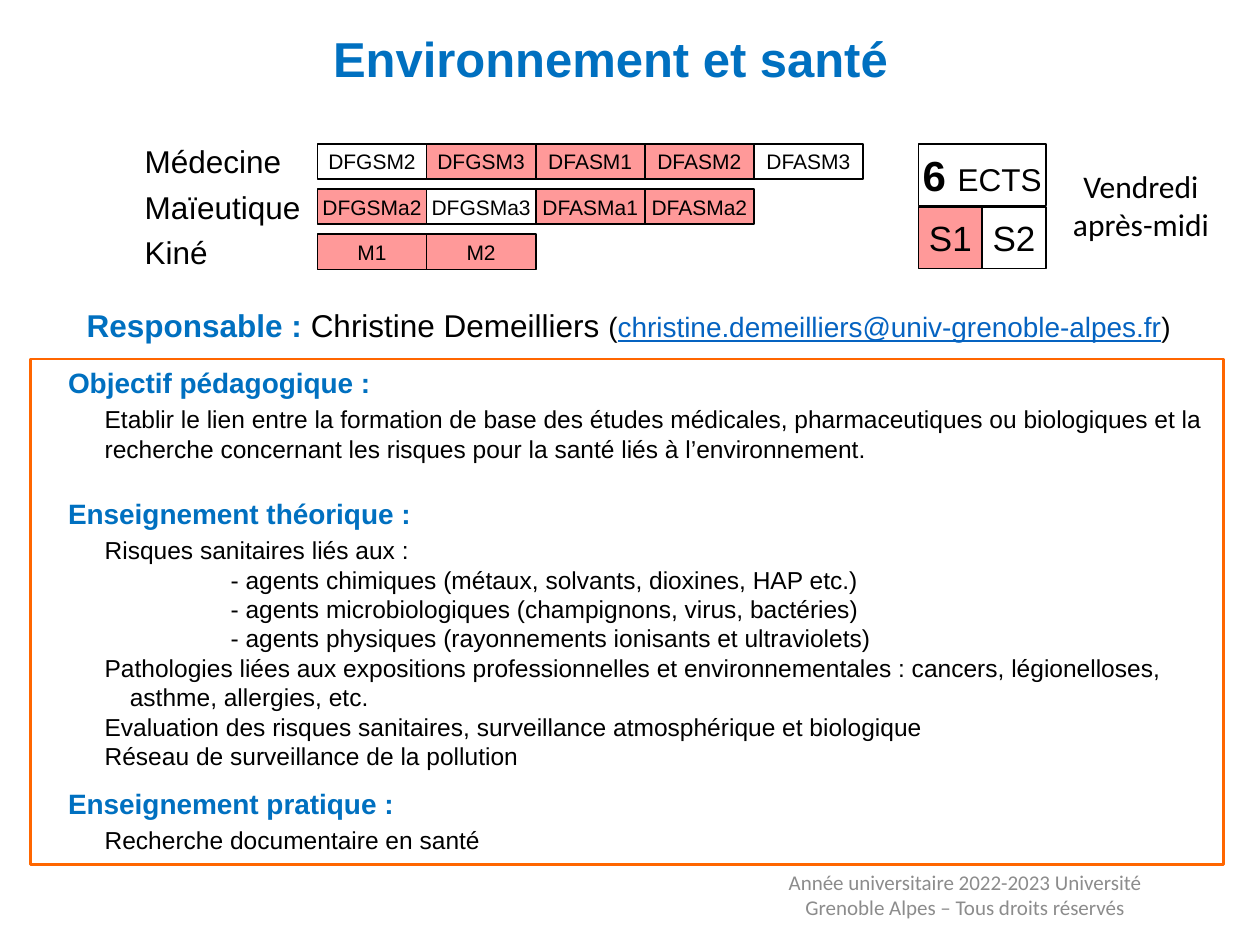
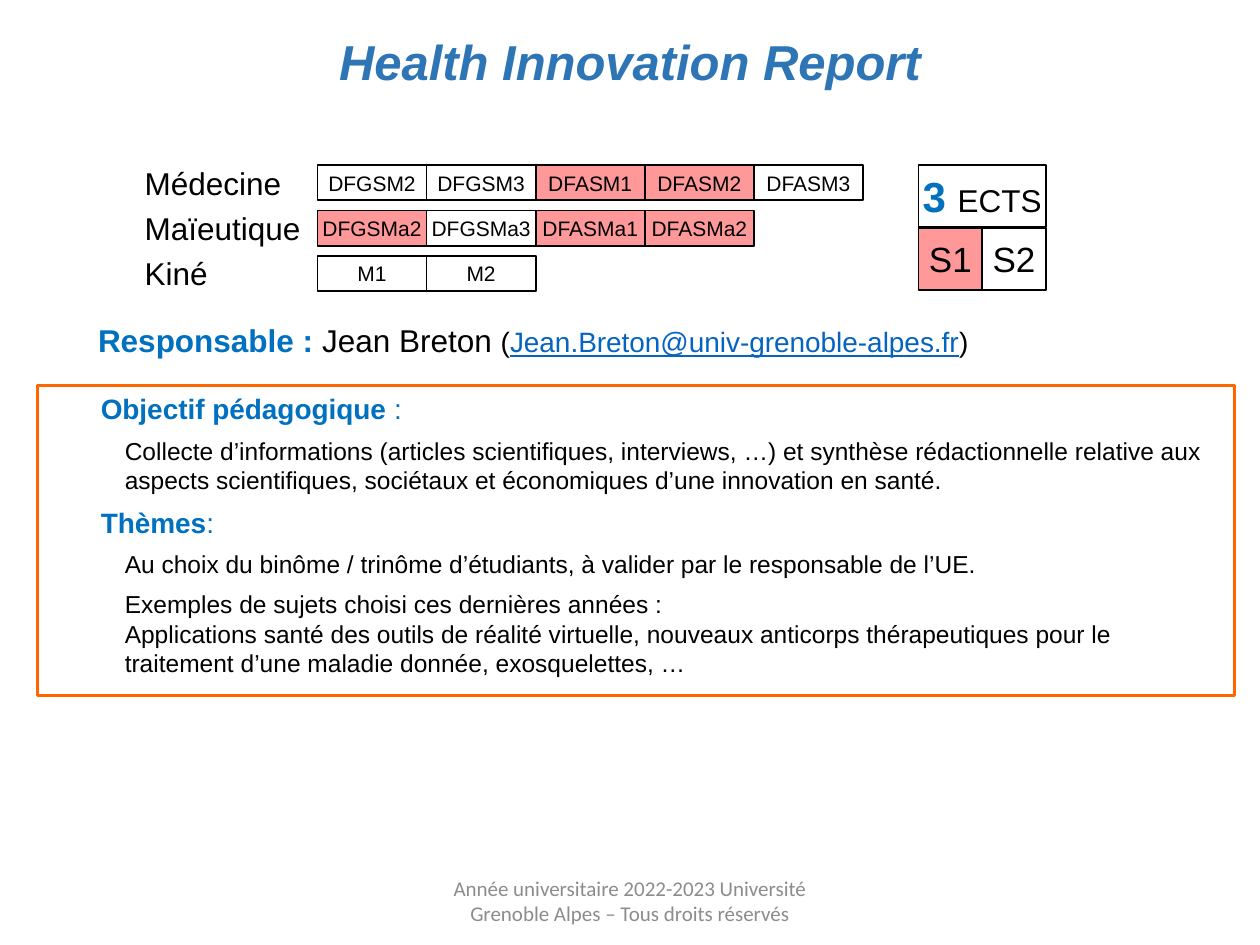
from pptx import Presentation
from pptx import util as u
from pptx.dml.color import RGBColor
from pptx.enum import shapes, text
from pptx.oxml.ns import qn
from lxml import etree

# Shared colours and layout
BLUE = RGBColor(0x00, 0x70, 0xC0)
STEEL = RGBColor(0x2E, 0x75, 0xB6)
LINK = RGBColor(0x05, 0x63, 0xC1)
GREY = RGBColor(0x8C, 0x8C, 0x8C)
ORANGE = RGBColor(0xFF, 0x66, 0x00)
PINK = RGBColor(0xFF, 0x99, 0x99)
WHITE = RGBColor(0xFF, 0xFF, 0xFF)
BLACK = RGBColor(0x00, 0x00, 0x00)
CENTER, LEFT = text.PP_ALIGN.CENTER, text.PP_ALIGN.LEFT

FOOTER = "Année universitaire 2022-2023 Université Grenoble Alpes – Tous droits réservés"
TRACKS = [
    ("Médecine", ["DFGSM2", "DFGSM3", "DFASM1", "DFASM2", "DFASM3"]),
    ("Maïeutique", ["DFGSMa2", "DFGSMa3", "DFASMa1", "DFASMa2"]),
    ("Kiné", ["M1", "M2"]),
]
GRID_LEFT, GRID_RIGHT, ROW_STEP = 2.52, 6.85, 0.36
YEAR_WIDTH = (GRID_RIGHT - GRID_LEFT) / 5
ECTS_LEFT, ECTS_WIDTH, ECTS_STEP = 7.29, 1.01, 0.5

# Content: each body line is (indent, hanging, space before, text, heading suffix);
# a suffix of None marks plain text
COURSES = [
    dict(
        title="Environnement et santé", title_at=(0, 0.18, 9.69, 0.57),
        title_format=dict(color=BLUE),
        grid_top=1.14, open_years=[{1, 2, 3}, {0, 2, 3}, {0, 1}],
        ects="6", ects_color=BLACK, slot="Vendredi après-midi",
        lead="Christine Demeilliers", lead_at=(0.59, 2.38, 9, 0.4),
        mail="christine.demeilliers@univ-grenoble-alpes.fr",
        footer_at=(5.97, 6.9, 3.38, 0.4), body_at=(0.24, 2.85, 9.47, 4.01),
        body=[
            (0.2, 0, 6, "Objectif pédagogique :", ""),
            (0.49, 0, 3, "Etablir le lien entre la formation de base des études médicales, "
             "pharmaceutiques ou biologiques et la recherche concernant les risques pour "
             "la santé liés à l’environnement.", None),
            (0.2, 0, 19, "Enseignement théorique :", ""),
            (0.49, 0, 3, "Risques sanitaires liés aux :", None),
            (1.49, 0, 0, "- agents chimiques (métaux, solvants, dioxines, HAP etc.)", None),
            (1.49, 0, 0, "- agents microbiologiques (champignons, virus, bactéries)", None),
            (1.49, 0, 0, "- agents physiques (rayonnements ionisants et ultraviolets)", None),
            (0.69, -0.2, 0, "Pathologies liées aux expositions professionnelles et "
             "environnementales : cancers, légionelloses, asthme, allergies, etc.", None),
            (0.49, 0, 0, "Evaluation des risques sanitaires, surveillance atmosphérique "
             "et biologique", None),
            (0.49, 0, 0, "Réseau de surveillance de la pollution", None),
            (0.2, 0, 9, "Enseignement pratique :", ""),
            (0.49, 0, 3, "Recherche documentaire en santé", None),
        ],
    ),
    dict(
        title="Health Innovation Report", title_at=(0, 0.2, 10, 0.77),
        title_format=dict(color=STEEL, italic=True),
        grid_top=1.31, open_years=[{2, 3}, {0, 2, 3}, set()],
        ects="3", ects_color=BLUE, slot=None,
        lead="Jean Breton", lead_at=(0.68, 2.5, 9, 0.4),
        mail="Jean.Breton@univ-grenoble-alpes.fr",
        footer_at=(3.31, 6.95, 3.38, 0.4), body_at=(0.3, 3.06, 9.5, 2.46),
        body=[
            (0.4, 0, 6, "Objectif pédagogique", " :"),
            (0.59, 0, 6, "Collecte d’informations (articles scientifiques, interviews, …) et "
             "synthèse rédactionnelle relative aux aspects scientifiques, sociétaux et "
             "économiques d’une innovation en santé.", None),
            (0.4, 0, 6, "Thèmes", ":"),
            (0.59, 0, 6, "Au choix du binôme / trinôme d’étudiants, à valider par le "
             "responsable de l’UE.", None),
            (0.59, 0, 6, "Exemples de sujets choisi ces dernières années :", None),
            (0.59, 0, 0, "Applications santé des outils de réalité virtuelle, nouveaux "
             "anticorps thérapeutiques pour le traitement d’une maladie donnée, "
             "exosquelettes, …", None),
        ],
    ),
]


def write(paragraph, words, size=18, color=BLACK, font="Arial", bold=False,
          italic=False, underline=False):
    run = paragraph.add_run()
    run.text = words
    run.font.size, run.font.name = u.Pt(size), font
    run.font.bold, run.font.italic, run.font.underline = bold, italic, underline
    run.font.color.rgb = color


def add_cell(slide, left, top, width, height, fill):
    """Draw an outlined cell and return its centred paragraph."""
    cell = slide.shapes.add_shape(shapes.MSO_SHAPE.RECTANGLE, u.Inches(left), u.Inches(top),
                                  u.Inches(width), u.Inches(height))
    cell.shadow.inherit = False
    cell.fill.solid()
    cell.fill.fore_color.rgb = fill
    cell.line.color.rgb, cell.line.width = BLACK, u.Pt(1)
    frame = cell.text_frame
    frame.margin_left = frame.margin_right = frame.margin_top = frame.margin_bottom = 0
    frame.vertical_anchor = text.MSO_ANCHOR.MIDDLE
    frame.word_wrap = False
    frame.paragraphs[0].alignment = CENTER
    return frame.paragraphs[0]


prs = Presentation()
prs.slide_width, prs.slide_height = u.Inches(10), u.Inches(7.5)

for course in COURSES:
    slide = prs.slides.add_slide(prs.slide_layouts[1])
    title, body = slide.shapes.title, slide.placeholders[1]
    for holder, place in ((title, course["title_at"]), (body, course["body_at"])):
        holder.left, holder.top, holder.width, holder.height = map(u.Inches, place)
        holder.text_frame.auto_size = text.MSO_AUTO_SIZE.NONE
        holder.text_frame.vertical_anchor = text.MSO_ANCHOR.TOP

    # Title
    heading = title.text_frame.paragraphs[0]
    heading.alignment = CENTER
    write(heading, course["title"], size=28, bold=True, **course["title_format"])

    # Framed description
    body.line.color.rgb, body.line.width = ORANGE, u.Pt(1.5)
    for i, (indent, hanging, before, words, suffix) in enumerate(course["body"]):
        frame = body.text_frame
        line = frame.add_paragraph() if i else frame.paragraphs[0]
        line.space_before, line.space_after = u.Pt(before), u.Pt(0)
        props = line._p.get_or_add_pPr()
        props.set("marL", str(u.Inches(indent)))
        props.set("indent", str(u.Inches(hanging)))
        etree.SubElement(props, qn("a:buNone"))
        if suffix is None:
            write(line, words, size=14)
        else:
            write(line, words, size=16, color=BLUE, bold=True)
            if suffix:
                write(line, suffix, size=16, color=BLUE)

    # Study years, with the open ones in pink
    grid_top = course["grid_top"]
    captions = []
    for row, ((track, years), open_years) in enumerate(zip(TRACKS, course["open_years"])):
        top = grid_top + row * ROW_STEP
        captions.append(((1.05, top - 0.06, 1.5, 0.4), LEFT, [(track, {})]))
        for col, year in enumerate(years):
            fill = PINK if col in open_years else WHITE
            label = add_cell(slide, GRID_LEFT + col * YEAR_WIDTH, top, YEAR_WIDTH, 0.28, fill)
            write(label, year, size=12)

    # Credits and semesters
    credits = add_cell(slide, ECTS_LEFT, grid_top, ECTS_WIDTH, 0.49, WHITE)
    write(credits, course["ects"] + " ", size=24, color=course["ects_color"], bold=True)
    write(credits, "ECTS")
    for col, (semester, fill) in enumerate([("S1", PINK), ("S2", WHITE)]):
        half = ECTS_WIDTH / 2
        label = add_cell(slide, ECTS_LEFT + col * half, grid_top + ECTS_STEP, half, 0.49, fill)
        write(label, semester, size=20)

    # Track names, lead teacher, time slot and footer
    captions.append((course["lead_at"], LEFT, [
        ("Responsable : ", dict(color=BLUE, bold=True)),
        (course["lead"] + " ", {}),
        ("(", dict(size=16)),
        (course["mail"], dict(size=16, color=LINK, underline=True)),
        (")", dict(size=16)),
    ]))
    if course["slot"]:
        captions.append(((8.4, 1.27, 1.31, 0.71), CENTER,
                         [(course["slot"], dict(font="Calibri"))]))
    captions.append((course["footer_at"], CENTER,
                     [(FOOTER, dict(size=12, color=GREY, font="Calibri"))]))
    for place, align, runs in captions:
        frame = slide.shapes.add_textbox(*map(u.Inches, place)).text_frame
        frame.word_wrap = True
        frame.vertical_anchor = text.MSO_ANCHOR.MIDDLE
        frame.paragraphs[0].alignment = align
        for words, style in runs:
            write(frame.paragraphs[0], words, **style)

prs.save("out.pptx")
